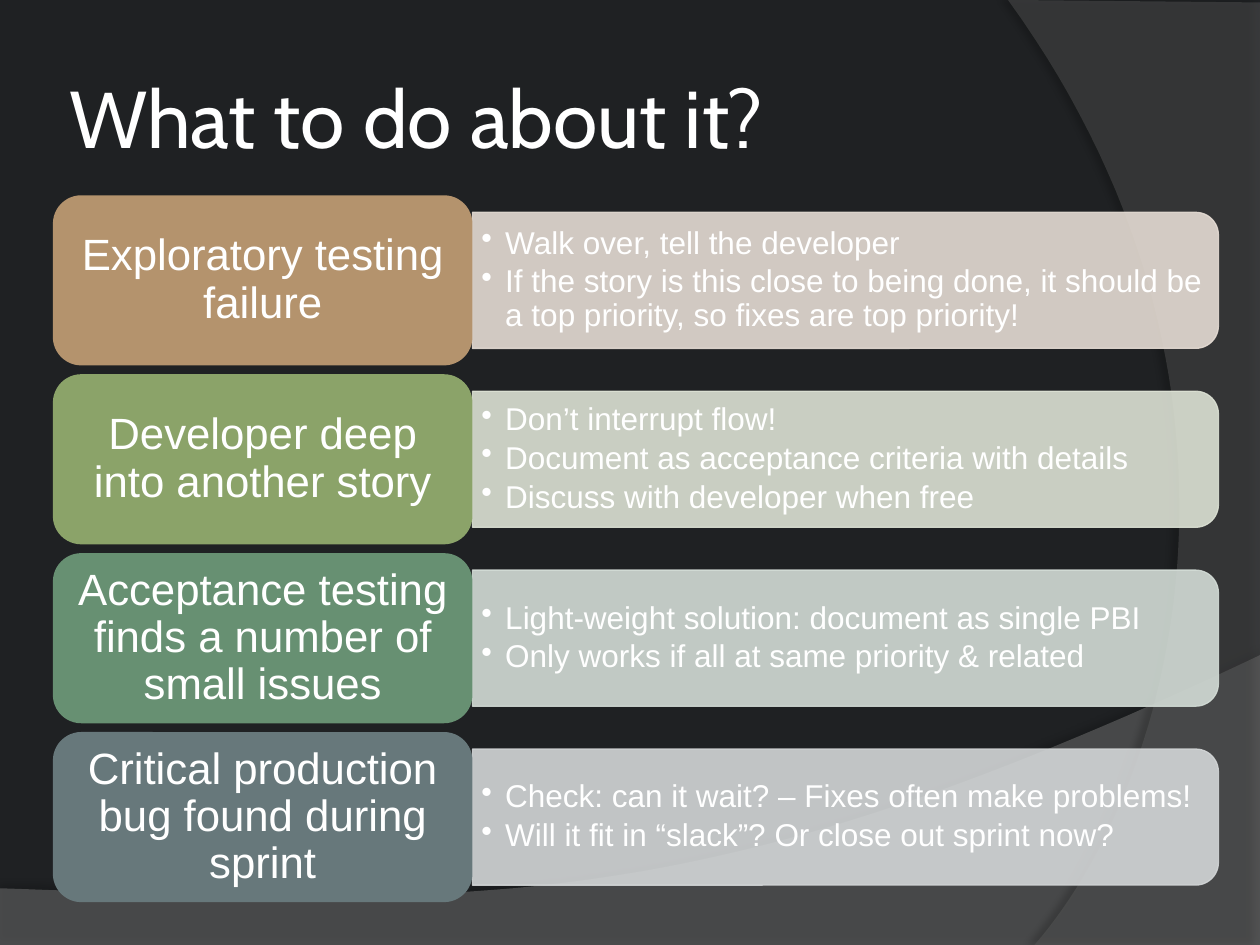
from dataclasses import dataclass

from lxml import etree
from pptx import Presentation, util as u
from pptx.dml.color import RGBColor
from pptx.enum import shapes, text
from pptx.oxml.ns import qn


@dataclass(frozen=True)
class Theme:
    back: str = "1F2123"
    ink: str = "FFFFFF"
    swoosh: str = "7F7F7F"
    arc: str = "5E5E5E"
    shade: str = "000000"
    head: str = "Cabin"
    body: str = "Arial"
    title: int = 46
    label: int = 25
    point: int = 18


T = Theme()
WIDE, HIGH = 10, 7.5
LEFT, TOP = 0.42, 1.55
SPLIT, PANEL = 3.33, 5.92
PITCH, ROW = 1.42, 1.35

ROWS = [
    ("Exploratory testing failure", "B4936D", "E5DCD4",
     ["Walk over, tell the developer",
      "If the story is this close to being done, it should be a top priority, "
      "so fixes are top priority!"]),
    ("Developer deep into another story", "8BA369", "DCE1D4",
     ["Don’t interrupt flow!",
      "Document as acceptance criteria with details",
      "Discuss with developer when free"]),
    ("Acceptance testing finds a number of small issues", "679072", "D3DCD6",
     ["Light-weight solution: document as single PBI",
      "Only works if all at same priority & related"]),
    ("Critical production bug found during sprint", "67787B", "D3D6D7",
     ["Check: can it wait? – Fixes often make problems!",
      "Will it fit in “slack”? Or close out sprint now?"]),
]


def inch(*nums):
    return [u.Inches(n) for n in nums]


def paint(shape, fill, alpha=100, line=None):
    shape.shadow.inherit = False
    shape.fill.solid()
    shape.fill.fore_color.rgb = RGBColor.from_string(fill)
    if line:
        shape.line.color.rgb = RGBColor.from_string(line)
        shape.line.width = u.Pt(0.75)
    else:
        shape.line.fill.background()
    if alpha < 100:
        for color in shape.element.spPr.iter(qn("a:srgbClr")):
            etree.SubElement(color, qn("a:alpha"), val=str(alpha * 1000))


def shade(shape, alpha, blur, dist, angle):
    """Cast an outer shadow; lengths in points, angle in degrees."""
    list_ = shape.element.spPr.find(qn("a:effectLst"))
    cast = etree.SubElement(
        list_, qn("a:outerShdw"), blurRad=str(u.Pt(blur)),
        dist=str(u.Pt(dist)), dir=str(angle * 60000), rotWithShape="0")
    color = etree.SubElement(cast, qn("a:srgbClr"), val=T.shade)
    etree.SubElement(color, qn("a:alpha"), val=str(alpha * 1000))


def write(shape, lines, size, font=T.body, align=text.PP_ALIGN.LEFT,
          inset=(0.1, 0.05), space=0.9, after=0, bullet=None):
    """Fill a shape with paragraphs; after is a share of the type size."""
    frame = shape.text_frame
    frame.word_wrap = True
    frame.vertical_anchor = text.MSO_ANCHOR.MIDDLE
    frame.margin_left = frame.margin_right = u.Inches(inset[0])
    frame.margin_top = frame.margin_bottom = u.Inches(inset[1])
    for i, line in enumerate(lines):
        para = frame.add_paragraph() if i else frame.paragraphs[0]
        para.alignment = align
        para.line_spacing = space
        para.space_after = u.Pt(after * size)
        run = para.add_run()
        run.text = line
        run.font.size = u.Pt(size)
        run.font.name = font
        run.font.color.rgb = RGBColor.from_string(T.ink)
        if bullet:
            props = para._p.get_or_add_pPr()
            hang = u.Inches(0.19)
            props.set("marL", str(hang))
            props.set("indent", str(-hang))
            etree.SubElement(props, qn("a:buChar"), char=bullet)


def curve(a, b, c, d, steps=60):
    """Points along a cubic Bezier curve, without its start."""
    for i in range(1, steps + 1):
        t = i / steps
        s = 1 - t
        yield tuple(s**3 * p + 3 * s * s * t * q + 3 * s * t * t * r + t**3 * e
                    for p, q, r, e in zip(a, b, c, d))


def outline(slide, points):
    mils = [(x * 1000, y * 1000) for x, y in points]
    pen = slide.shapes.build_freeform(*mils[0], scale=u.Inches(1) / 1000)
    pen.add_line_segments(mils[1:], close=True)
    return pen.convert_to_shape()


def backdrop(slide, wide, high):
    fill = slide.background.fill
    fill.solid()
    fill.fore_color.rgb = RGBColor.from_string(T.back)

    crest = (wide, 5.2)
    swoosh = outline(slide, [
        (0, 7.05), (0, high), (wide, high), crest,
        *curve(crest, (5.59, 7.29), (3.91, 7.19), (0, 7.05))])
    paint(swoosh, T.swoosh, 45)
    shade(swoosh, 35, 4, 3.5, 270)

    foot = (8.21, high)
    arc = outline(slide, [
        (wide, 0.02), (wide, high), foot,
        *curve(foot, (9.35, 6.19), (10.18, 3), (8, 0))])
    paint(arc, T.arc, 40)
    shade(arc, 45, 4, 4, 180)


def heading(slide, x, y, w, h):
    box = slide.shapes.add_textbox(*inch(x, y, w, h))
    write(box, ["What to do about it?"], T.title, font=T.head,
          inset=(0.05, 0.05), space=1)


def panel(slide, x, y, w, h, tint, points):
    """Bullets on a bar whose right corners are round."""
    # The bar stands upright about its centre, then turns a quarter.
    bar = slide.shapes.add_shape(
        shapes.MSO_SHAPE.ROUND_2_SAME_RECTANGLE,
        *inch(x + (w - h) / 2, y + (h - w) / 2, h, w))
    bar.rotation = 90
    paint(bar, tint, 90, line=tint)
    pad = 0.05
    box = slide.shapes.add_textbox(*inch(x, y + pad, w - pad, h - 2 * pad))
    write(box, points, T.point, inset=(0.07, 0.04), after=0.15, bullet="•")


def label(slide, x, y, w, h, tint, name):
    card = slide.shapes.add_shape(
        shapes.MSO_SHAPE.ROUNDED_RECTANGLE, *inch(x, y, w, h))
    paint(card, tint)
    write(card, [name], T.label, align=text.PP_ALIGN.CENTER)


def band(slide, x, y, w, h, row):
    name, dark, pale, points = row
    bar = h * 0.8
    panel(slide, x + SPLIT, y + (h - bar) / 2, w - SPLIT, bar, pale, points)
    label(slide, x, y, SPLIT, h, dark, name)


def main():
    deck = Presentation()
    deck.slide_width, deck.slide_height = inch(WIDE, HIGH)
    slide = deck.slides.add_slide(deck.slide_layouts[6])
    backdrop(slide, WIDE, HIGH)
    heading(slide, 0.5, 0.3, 8.17, 1.25)
    for i, row in enumerate(ROWS):
        band(slide, LEFT, TOP + i * PITCH, SPLIT + PANEL, ROW, row)
    deck.save("out.pptx")


if __name__ == "__main__":
    main()
